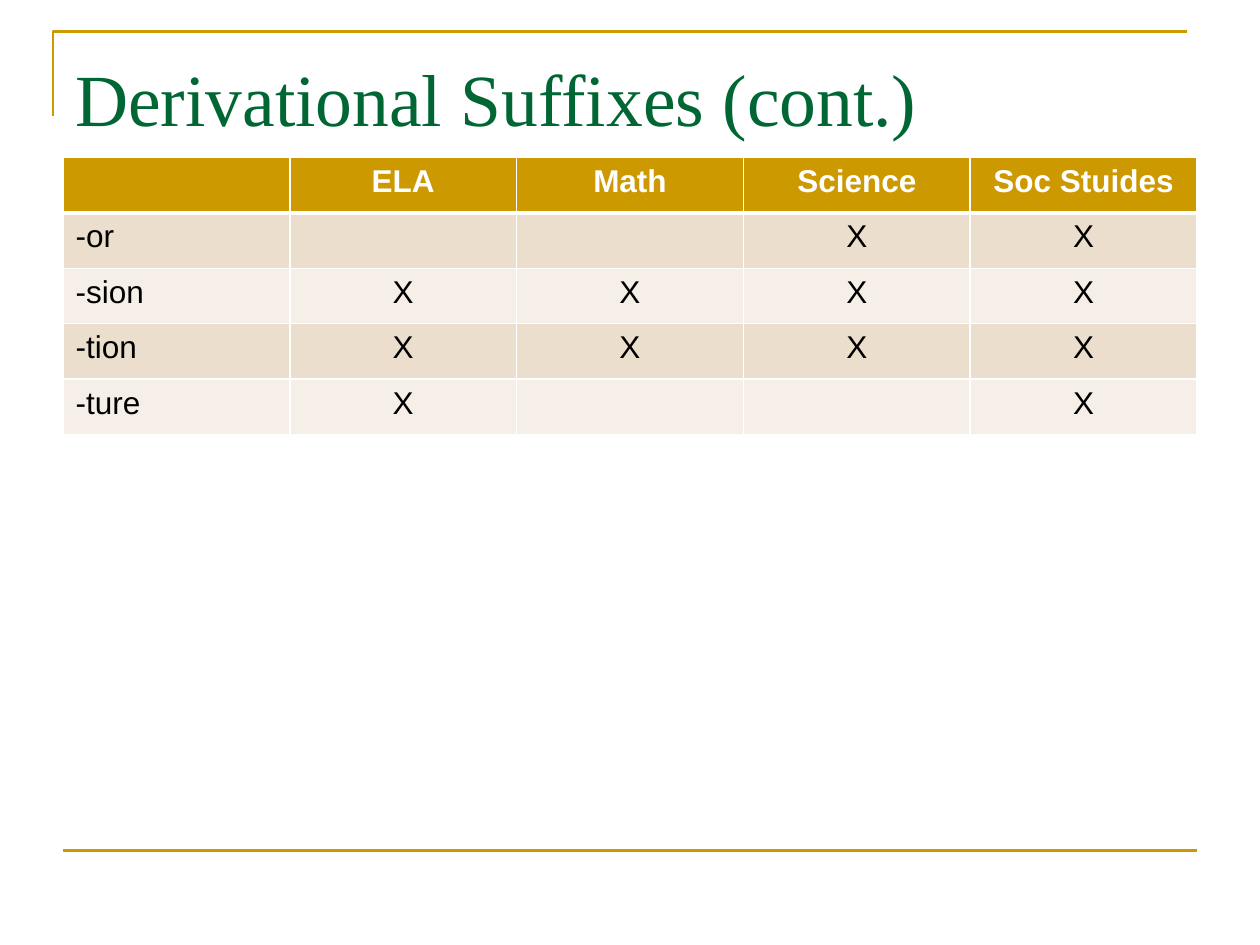
from lxml import etree
from pptx import Presentation
from pptx.dml.color import RGBColor
from pptx.enum.shapes import MSO_CONNECTOR
from pptx.enum.text import MSO_ANCHOR, PP_ALIGN
from pptx.oxml.ns import qn
from pptx.util import Inches, Pt

LINE = MSO_CONNECTOR.STRAIGHT
TOP = MSO_ANCHOR.TOP
LEFT, CENTER = PP_ALIGN.LEFT, PP_ALIGN.CENTER

# Content
TITLE = "Derivational Suffixes (cont.)"
ROWS = [
    ("", "ELA", "Math", "Science", "Soc Stuides"),
    ("-or", "", "", "X", "X"),
    ("-sion", "X", "X", "X", "X"),
    ("-tion", "X", "X", "X", "X"),
    ("-ture", "X", "", "", "X"),
]
GOLD, GREEN, WHITE, BLACK = "CC9900", "006633", "FFFFFF", "000000"
BANDS = ("F6EFE7", "ECDECC")
COL_W, ROW_H = 1.8, 0.44


def rgb(value):
    return RGBColor.from_string(value)


def style(p, font, size, color, bold=False, align=LEFT):
    p.alignment = align
    for r in p.runs:
        r.font.name, r.font.size, r.font.bold = font, Pt(size), bold
        r.font.color.rgb = rgb(color)


def set_borders(cell, widths):
    """Draw white borders; widths are in points, keyed by side."""
    tc_pr = cell._tc.get_or_add_tcPr()
    for i, side in enumerate("LRTB"):
        ln = etree.Element(qn(f"a:ln{side}"), w=str(Pt(widths.get(side, 1))))
        fill = etree.SubElement(ln, qn("a:solidFill"))
        etree.SubElement(fill, qn("a:srgbClr"), val=WHITE)
        tc_pr.insert(i, ln)


prs = Presentation()
prs.slide_width, prs.slide_height = Inches(10), Inches(7.5)
s = prs.slides.add_slide(prs.slide_layouts[6])

# Corner frame and bottom rule
fb = s.shapes.build_freeform(Inches(0.42), Inches(0.92))
fb.add_line_segments([(Inches(0.42), Inches(0.25)),
                      (Inches(9.42), Inches(0.25))], close=False)
frame = fb.convert_to_shape()
frame.fill.background()
frame.shadow.inherit = False

rule = s.shapes.add_connector(LINE, Inches(0.5), Inches(6.75),
                              Inches(9.5), Inches(6.75))
etree.SubElement(rule._element.spPr, qn("a:effectLst"))
for sp in (frame, rule):
    sp.line.color.rgb = rgb(GOLD)
    sp.line.width = Pt(1.5)

# Title
tf = s.shapes.add_textbox(Inches(0.5), Inches(0.3),
                          Inches(9), Inches(1.25)).text_frame
tf.word_wrap = True
tf.vertical_anchor = TOP
tf.margin_top = Inches(0.12)
tf.text = TITLE
style(tf.paragraphs[0], "Times New Roman", 42, GREEN)

# Suffix table
n_rows, n_cols = len(ROWS), len(ROWS[0])
table = s.shapes.add_table(n_rows, n_cols, Inches(0.5), Inches(1.25),
                           Inches(COL_W * n_cols),
                           Inches(ROW_H * n_rows)).table
for col in table.columns:
    col.width = Inches(COL_W)
for i, values in enumerate(ROWS):
    header = i == 0
    for j, value in enumerate(values):
        cell = table.cell(i, j)
        cell.fill.solid()
        cell.fill.fore_color.rgb = rgb(GOLD if header else BANDS[i % 2])
        set_borders(cell, {"B": 3} if header else {"T": 3} if i == 1 else {})
        cell.text = value
        style(cell.text_frame.paragraphs[0], "Arial", 18,
              WHITE if header else BLACK, header, CENTER if j else LEFT)

prs.save("out.pptx")
